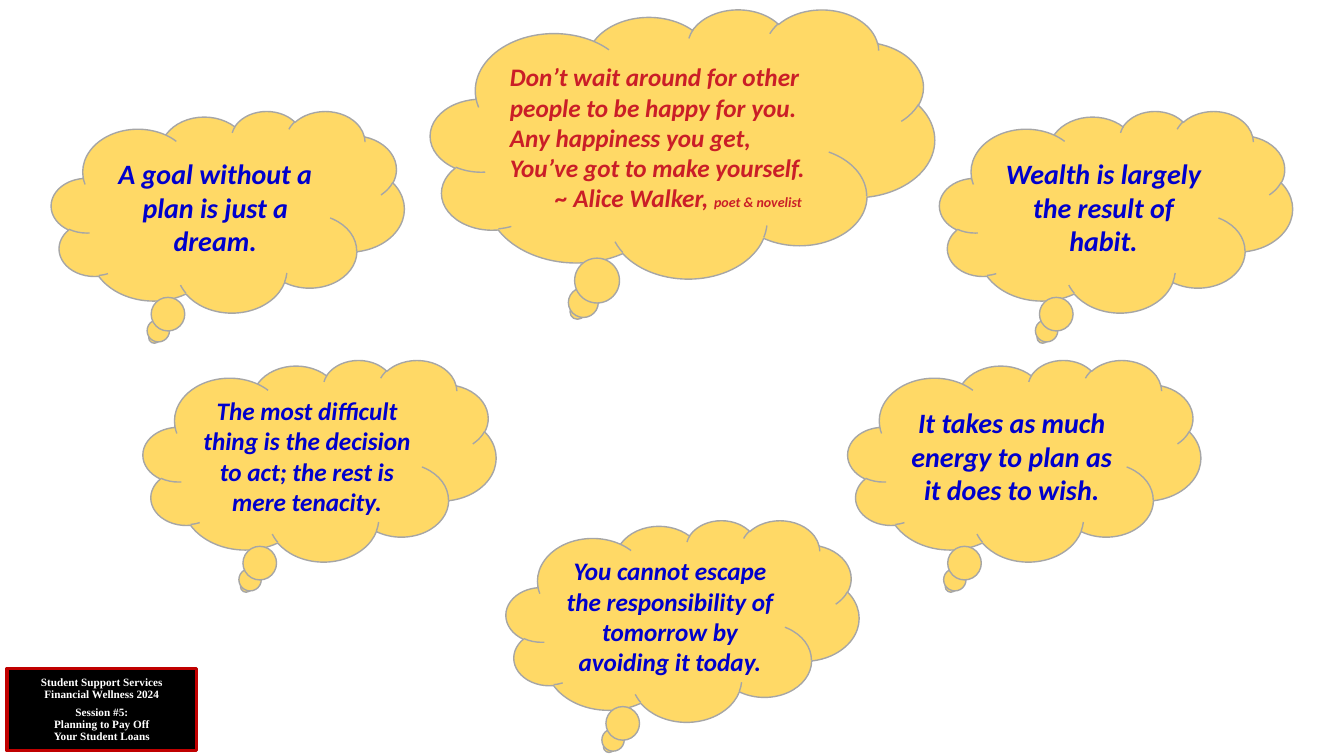
"""Build a slide of money and happiness quotations in thought clouds."""
from dataclasses import dataclass

from pptx import Presentation
from pptx import util as u
from pptx.dml.color import RGBColor
from pptx.enum import shapes, text
from pptx.shapes.autoshape import Shape
from pptx.slide import Slide
from pptx.text.text import _Paragraph as Paragraph

EMU_PER_PX = 9144
COLORS = {
    "cloud": "FFD966",
    "cloud_line": "A6A6A6",
    "quote": "0000CC",
    "main_quote": "CA1E27",
    "badge": "000000",
    "badge_line": "C00000",
    "badge_text": "FFFFFF",
}


@dataclass(frozen=True)
class Box:
    left: int
    top: int
    width: int = 350
    height: int = 200


@dataclass(frozen=True)
class Quote:
    words: str
    box: Box
    size: int


@dataclass(frozen=True)
class Line:
    words: str
    indent: int = 0
    space_before: int = 0


QUOTES = (
    Quote("A goal without a plan is just a dream.", Box(51, 110), 20),
    Quote("The most difficult thing is the decision to act; the rest is mere tenacity.", Box(142, 357), 18),
    Quote("Wealth is largely the result of habit.", Box(932, 110), 20),
    Quote("It takes as much energy to plan as it does to wish.", Box(841, 357), 20),
    Quote("You cannot escape the responsibility of tomorrow by avoiding it today.", Box(502, 516), 18),
)
MAIN_BOX = Box(427, 9, 500, 267)
MAIN_LINES = (
    Line("Don’t wait around for other people to be happy for you."),
    Line("Any happiness you get,"),
    Line("You’ve got to make yourself."),
    Line("~ Alice Walker, ", indent=45),
)
BADGE_BOX = Box(7, 663, 188, 82)
BADGE_LINES = (
    Line("Student Support Services"),
    Line("Financial Wellness 2024"),
    Line("Session #5:", space_before=4),
    Line("Planning to Pay Off"),
    Line("Your Student Loans"),
)


def px(length: int) -> int:
    return u.Emu(length * EMU_PER_PX)


def color(name: str) -> RGBColor:
    return RGBColor.from_string(COLORS[name])


def add_box(slide: Slide, kind: shapes.MSO_SHAPE, box: Box, fill: str, line_width: float) -> Shape:
    shape = slide.shapes.add_shape(kind, px(box.left), px(box.top), px(box.width), px(box.height))
    shape.shadow.inherit = False
    shape.fill.solid()
    shape.fill.fore_color.rgb = color(fill)
    shape.line.color.rgb = color(f"{fill}_line")
    shape.line.width = u.Pt(line_width)
    shape.text_frame.word_wrap = True
    shape.text_frame.vertical_anchor = text.MSO_ANCHOR.MIDDLE
    return shape


def add_text(paragraph: Paragraph, words: str, *, size: int, fill: str,
             font: str = "Calibri", italic: bool = True) -> None:
    run = paragraph.add_run()
    run.text = words
    run.font.name = font
    run.font.size = u.Pt(size)
    run.font.bold = True
    run.font.italic = italic
    run.font.color.rgb = color(fill)


def add_lines(shape: Shape, lines: tuple[Line, ...], align: text.PP_ALIGN,
              spacing: float = 1.0, **text_format) -> Paragraph:
    frame = shape.text_frame
    for index, line in enumerate(lines):
        paragraph = frame.add_paragraph() if index else frame.paragraphs[0]
        paragraph.alignment = align
        paragraph.line_spacing = spacing
        if line.space_before:
            paragraph.space_before = u.Pt(line.space_before)
        if line.indent:
            paragraph._p.get_or_add_pPr().set("marL", str(px(line.indent)))
        add_text(paragraph, line.words, **text_format)
    return paragraph


def main() -> None:
    presentation = Presentation()
    presentation.slide_width = px(1333)
    presentation.slide_height = px(750)
    slide = presentation.slides.add_slide(presentation.slide_layouts[6])

    badge = add_box(slide, shapes.MSO_SHAPE.RECTANGLE, BADGE_BOX, "badge", 2.25)
    add_lines(badge, BADGE_LINES, text.PP_ALIGN.CENTER, spacing=0.9,
              size=8, fill="badge_text", font="Times New Roman", italic=False)

    for quote in QUOTES:
        cloud = add_box(slide, shapes.MSO_SHAPE.CLOUD_CALLOUT, quote.box, "cloud", 1)
        add_lines(cloud, (Line(quote.words),), text.PP_ALIGN.CENTER, size=quote.size, fill="quote")

    main_cloud = add_box(slide, shapes.MSO_SHAPE.CLOUD_CALLOUT, MAIN_BOX, "cloud", 1)
    author = add_lines(main_cloud, MAIN_LINES, text.PP_ALIGN.LEFT, size=18, fill="main_quote")
    add_text(author, "poet & novelist", size=10, fill="main_quote")

    presentation.save("out.pptx")


if __name__ == "__main__":
    main()
